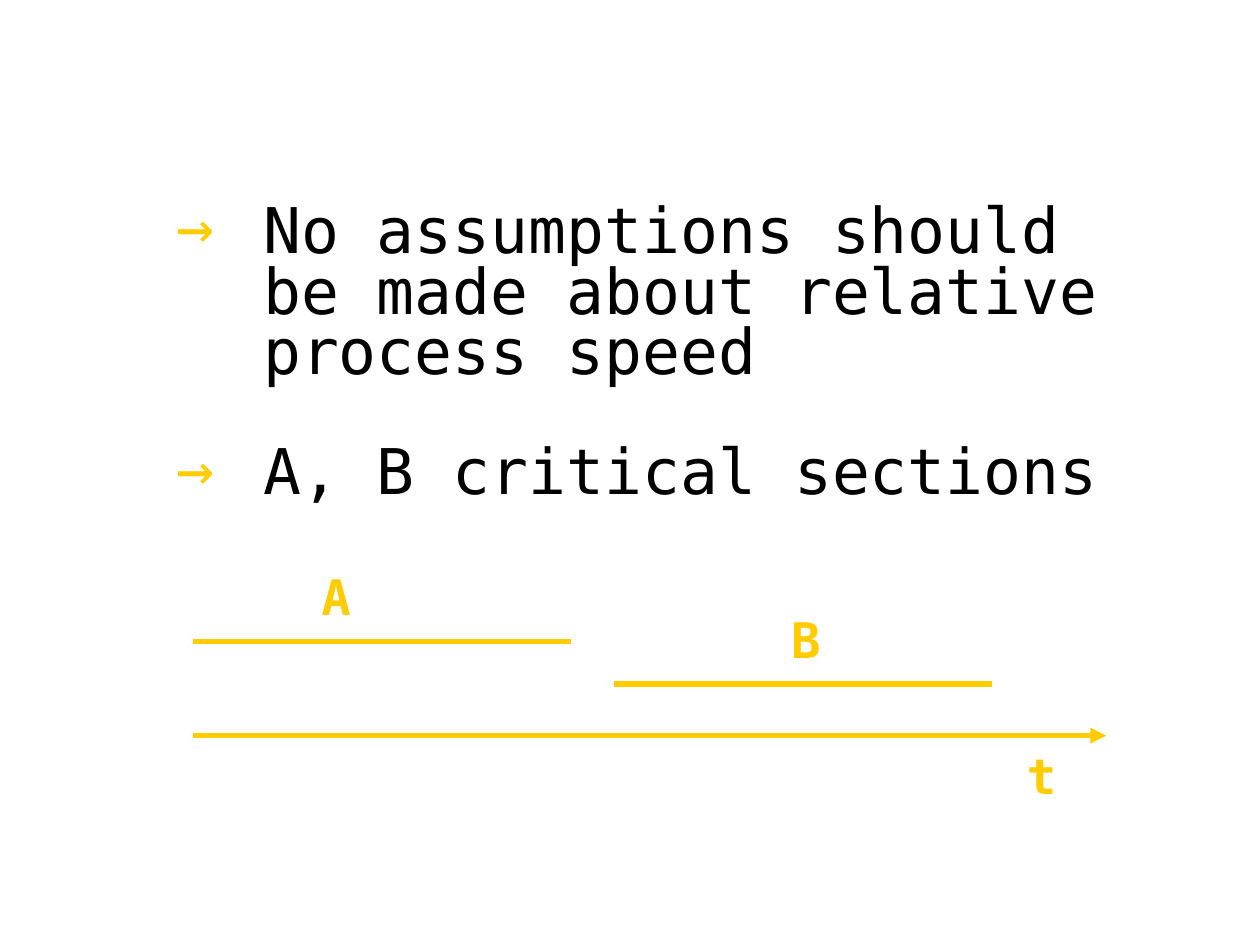
from dataclasses import dataclass

from lxml import etree
from pptx import Presentation
from pptx.dml.color import RGBColor
from pptx.enum import shapes, text
from pptx.oxml import ns
from pptx.util import Cm, Pt

GOLD = RGBColor(0xFF, 0xCC, 0x00)
BLACK = RGBColor(0, 0, 0)
FONT = "DejaVu Sans Mono"


@dataclass
class Point:
    lines: list[str]
    top: float
    high: float
    pitch: float


@dataclass
class Bar:
    left: float
    right: float
    top: float
    arrow: bool = False


@dataclass
class Label:
    name: str
    left: float
    top: float


POINTS = [
    Point(["No assumptions should ", "be made about relative process speed"],
          4.01, 3.91, 0.8),
    Point(["A, B critical sections"], 8.74, 1.63, 0.9),
]
BARS = [
    Bar(3.89, 11.51, 12.93),
    Bar(12.37, 19.99, 13.79),
    Bar(3.89, 22.3, 14.83, arrow=True),
]
LABELS = [
    Label("A", 6.43, 11.3),
    Label("B", 15.9, 12.17),
    Label("t", 20.65, 14.91),
]


def add_run(para, words: str, size: int, color: RGBColor, bold: bool) -> None:
    run = para.add_run()
    run.text = words
    run.font.name = FONT
    run.font.size = Pt(size)
    run.font.bold = bold
    run.font.color.rgb = color


def set_bullet(para, mark: str, color: RGBColor) -> None:
    props = para._p.get_or_add_pPr()
    props.set("marL", str(Cm(1.75)))
    props.set("indent", str(-Cm(1.75)))
    tint = etree.SubElement(props, ns.qn("a:buClr"))
    etree.SubElement(tint, ns.qn("a:srgbClr"), val=str(color))
    etree.SubElement(props, ns.qn("a:buFont"), typeface=FONT)
    etree.SubElement(props, ns.qn("a:buChar"), char=mark)


def fill_point(holder, point: Point) -> None:
    holder.left, holder.top = Cm(3.3), Cm(point.top)
    holder.width, holder.height = Cm(19.63), Cm(point.high)
    frame = holder.text_frame
    frame.auto_size = text.MSO_AUTO_SIZE.SHAPE_TO_FIT_TEXT
    frame.vertical_anchor = text.MSO_ANCHOR.TOP
    para = frame.paragraphs[0]
    para.line_spacing = point.pitch
    para.space_before = Pt(0)
    set_bullet(para, "→", GOLD)
    for num, line in enumerate(point.lines):
        if num:
            para.add_line_break()
        add_run(para, line, 36, BLACK, False)


def draw_bar(slide, bar: Bar) -> None:
    line = slide.shapes.add_connector(
        shapes.MSO_CONNECTOR.STRAIGHT,
        Cm(bar.left), Cm(bar.top), Cm(bar.right), Cm(bar.top))
    line.line.color.rgb = GOLD
    line.line.width = Pt(3)
    if bar.arrow:
        etree.SubElement(line.line._get_or_add_ln(), ns.qn("a:tailEnd"),
                         type="triangle")
    etree.SubElement(line._element.spPr, ns.qn("a:effectLst"))


def draw_label(slide, label: Label) -> None:
    box = slide.shapes.add_textbox(
        Cm(label.left), Cm(label.top), Cm(0.69), Cm(1.45))
    frame = box.text_frame
    frame.word_wrap = False
    frame.auto_size = text.MSO_AUTO_SIZE.SHAPE_TO_FIT_TEXT
    frame.margin_left = frame.margin_right = Cm(0.05)
    para = frame.paragraphs[0]
    para.alignment = text.PP_ALIGN.CENTER
    para.space_before = Pt(5.6)
    add_run(para, label.name, 28, GOLD, True)


def main() -> None:
    deck = Presentation()
    deck.slide_width, deck.slide_height = Cm(25.4), Cm(19.05)
    # Two-content layout: one body for each point, no title
    slide = deck.slides.add_slide(deck.slide_layouts[3])
    title = slide.shapes.title._element
    title.getparent().remove(title)

    # Timeline with the two critical sections
    for bar in BARS:
        draw_bar(slide, bar)
    for label in LABELS:
        draw_label(slide, label)

    # Bulleted points
    for holder, point in zip(slide.placeholders, POINTS):
        fill_point(holder, point)

    deck.save("out.pptx")


if __name__ == "__main__":
    main()
